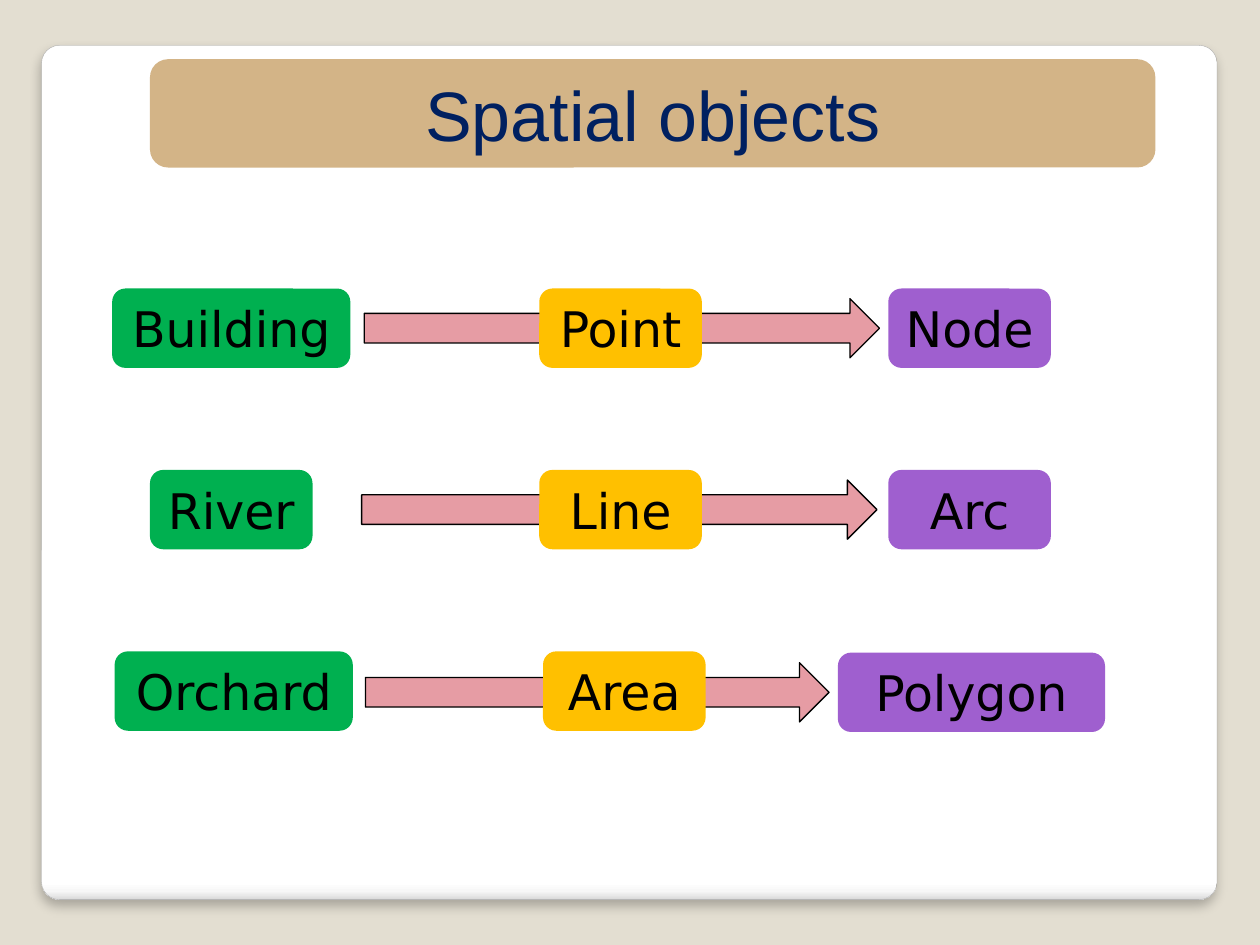
from lxml.etree import SubElement
from pptx import Presentation
from pptx.dml.color import RGBColor
from pptx.enum.shapes import MSO_SHAPE
from pptx.enum.text import MSO_ANCHOR, PP_ALIGN
from pptx.oxml import parse_xml
from pptx.oxml.ns import nsdecls, qn
from pptx.util import Inches, Pt

COLORS = {
    "background": "E3DED1", "card_edge": "A4A4A4", "banner": "D3B487",
    "title": "002060", "text": "000000", "object": "00B050",
    "geometry": "FFC000", "element": "9F5FCF", "arrow": "E69CA4",
}
CARD_STOPS = [(0, "FFFFFF"), (98, "FFFFFF"), (99, "F7F7F7"), (100, "DADADA")]
BOX_HEIGHT = 0.63
ARROW_HEIGHT = 0.47

# Each row: label, left, top and width of its boxes; left, top and width of its arrow
ROWS = [
    {"object": ("Building", 0.89, 2.29, 1.89), "element": ("Node", 7.05, 2.29, 1.29),
     "arrow": (2.89, 2.37, 4.09), "geometry": ("Point", 4.28, 2.29, 1.29)},
    {"object": ("River", 1.19, 3.73, 1.29), "element": ("Arc", 7.05, 3.73, 1.29),
     "arrow": (2.87, 3.81, 4.09), "geometry": ("Line", 4.28, 3.73, 1.29)},
    {"object": ("Orchard", 0.91, 5.17, 1.89), "element": ("Polygon", 6.65, 5.18, 2.12),
     "arrow": (2.9, 5.26, 3.68), "geometry": ("Area", 4.31, 5.17, 1.29)},
]


def rgb(name):
    return RGBColor.from_string(COLORS[name])


class SlideBuilder:
    """Holds the text style and the slide being filled."""

    title_font, title_size = "Arial", 40
    label_font, label_size = "DejaVu Sans", 28

    def __init__(self, deck):
        self.slide = deck.slides.add_slide(deck.slide_layouts[5])
        fill = self.slide.background.fill
        fill.solid()
        fill.fore_color.rgb = rgb("background")

    def shape(self, parent, kind, place, color, line=None, line_width=0.75):
        shape = parent.add_shape(kind, *map(Inches, place))
        shape.shadow.inherit = False
        shape.fill.solid()
        shape.fill.fore_color.rgb = rgb(color)
        if line:
            shape.line.color.rgb = rgb(line)
            shape.line.width = Pt(line_width)
        else:
            shape.line.fill.background()
        return shape

    def centred_text(self, shape, text, font, size, color):
        frame = shape.text_frame
        frame.word_wrap = True
        frame.vertical_anchor = MSO_ANCHOR.MIDDLE
        para = frame.paragraphs[0]
        para.alignment = PP_ALIGN.CENTER
        span = para.add_run()
        span.text = text
        span.font.name = font
        span.font.size = Pt(size)
        span.font.color.rgb = rgb(color)

    def card(self, place):
        """Rounded white panel with a shaded lower edge and a soft shadow."""
        card = self.shape(self.slide.shapes, MSO_SHAPE.ROUNDED_RECTANGLE, place,
                          "background", "card_edge", 0.16)
        card.adjustments[0] = 0.021
        properties = card.element.spPr
        stops = "".join(
            f'<a:gs pos="{position * 1000}"><a:srgbClr val="{color}"/></a:gs>'
            for position, color in CARD_STOPS)
        gradient = parse_xml(
            f'<a:gradFill {nsdecls("a")}><a:gsLst>{stops}</a:gsLst>'
            '<a:lin ang="5400000" scaled="0"/></a:gradFill>')
        properties.replace(properties.find(qn("a:solidFill")), gradient)
        shadow = SubElement(
            properties.find(qn("a:effectLst")), qn("a:outerShdw"),
            blurRad=str(Pt(6)), dist=str(Pt(4)), dir="5400000",
            algn="tl", rotWithShape="0")
        color = SubElement(shadow, qn("a:srgbClr"), val="000000")
        SubElement(color, qn("a:alpha"), val="25000")

    def title(self, text, place):
        shapes = self.slide.shapes
        self.shape(shapes, MSO_SHAPE.ROUNDED_RECTANGLE, place, "banner")
        title = shapes.title
        title.left, title.top, title.width, title.height = map(Inches, place)
        self.centred_text(title, text, self.title_font, self.title_size, "title")
        shapes.element.append(title.element)  # bring in front of the banner

    def box(self, parent, role, label, left, top, width):
        box = self.shape(parent, MSO_SHAPE.ROUNDED_RECTANGLE,
                         (left, top, width, BOX_HEIGHT), role)
        self.centred_text(box, label, self.label_font, self.label_size, "text")

    def row(self, parts):
        """Group of object, element and geometry boxes joined by an arrow."""
        group = self.slide.shapes.add_group_shape().shapes
        for role, values in parts.items():
            if role == "arrow":
                self.shape(group, MSO_SHAPE.RIGHT_ARROW, (*values, ARROW_HEIGHT),
                           "arrow", "text")
            else:
                self.box(group, role, *values)


def main():
    deck = Presentation()
    deck.slide_width, deck.slide_height = Inches(10), Inches(7.5)
    builder = SlideBuilder(deck)
    builder.card((0.33, 0.36, 9.33, 6.78))
    builder.title("Spatial objects", (1.19, 0.47, 7.98, 0.86))
    for parts in ROWS:
        builder.row(parts)
    deck.save("out.pptx")


if __name__ == "__main__":
    main()
